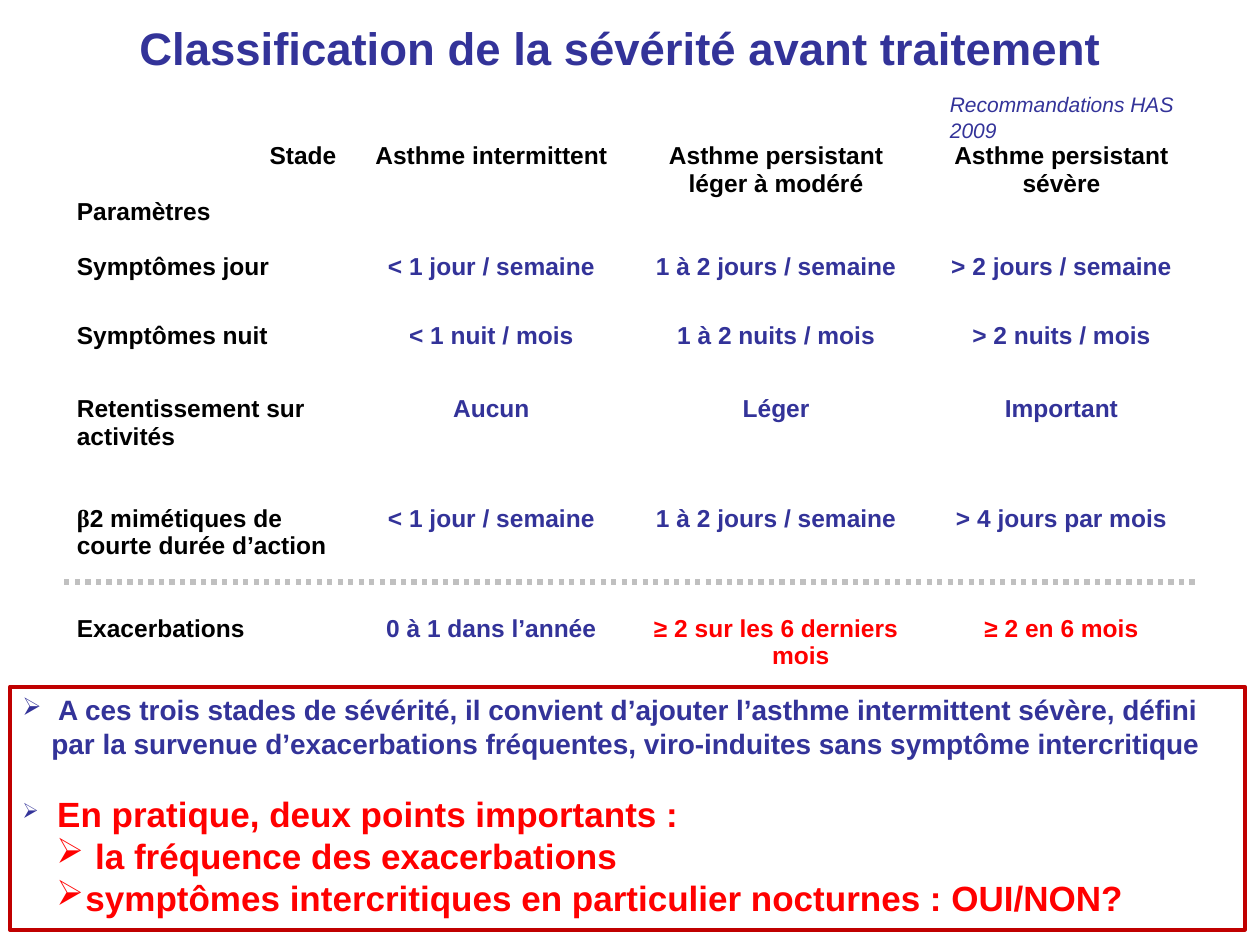
import pptx
import pptx.util
import pptx.dml.color
import pptx.enum.dml
import pptx.enum.shapes
import pptx.enum.text
import pptx.oxml
from lxml import etree

Inches = pptx.util.Inches
Pt = pptx.util.Pt
RGBColor = pptx.dml.color.RGBColor
ALIGN = pptx.enum.text.PP_ALIGN

NAVY = RGBColor(0x33, 0x33, 0x99)
BLACK = RGBColor(0, 0, 0)
RED = RGBColor(0xFF, 0, 0)
DARK_RED = RGBColor(0xC0, 0, 0)
SILVER = RGBColor(0xC0, 0xC0, 0xC0)
WHITE = RGBColor(0xFF, 0xFF, 0xFF)

TABLE_LEFT, TABLE_TOP = 0.51, 1.08
COLUMN_WIDTHS = [2.26, 2.26, 2.26, 2.27]
ROW_HEIGHTS = [0.88, 0.55, 0.58, 0.87, 0.87, 0.58]
CRITERIA = [
    ["Stade\nParamètres", "Asthme intermittent", "Asthme persistant\nléger à modéré",
     "Asthme persistant\nsévère"],
    ["Symptômes jour", "< 1 jour / semaine", "1 à 2 jours / semaine", "> 2 jours / semaine"],
    ["Symptômes nuit", "< 1 nuit / mois", "1 à 2 nuits / mois", "> 2 nuits / mois"],
    ["Retentissement sur\nactivités", "Aucun", "Léger", "Important"],
    ["β2 mimétiques de\ncourte durée d’action", "< 1 jour / semaine",
     "1 à 2 jours / semaine", "> 4 jours par mois"],
    ["Exacerbations", "0 à 1 dans l’année", "≥ 2 sur les 6 derniers mois", "≥ 2 en 6 mois"],
]
DEFINITION = ("A ces trois stades de sévérité, il convient d’ajouter l’asthme intermittent "
              "sévère, défini par la survenue d’exacerbations fréquentes, viro-induites "
              "sans symptôme intercritique")


def style(run, size, color, bold=False, italic=False, font="Arial"):
    run.font.name = font
    run.font.size = Pt(size)
    run.font.bold = bold
    run.font.italic = italic
    run.font.color.rgb = color


def add_run(paragraph, text, *look, **extra):
    run = paragraph.add_run()
    run.text = text
    style(run, *look, **extra)


def set_indent(paragraph, margin, first_line):
    properties = paragraph._p.get_or_add_pPr()
    properties.set("marL", str(Inches(margin)))
    properties.set("indent", str(Inches(first_line)))
    return properties


def set_bullet(paragraph, margin):
    properties = set_indent(paragraph, margin, -0.23)
    bullet = etree.SubElement(properties, pptx.oxml.ns.qn("a:buChar"))
    bullet.set("char", "➢")


def set_borders(cell, color):
    properties = cell._tc.get_or_add_tcPr()
    for position, side in enumerate(("lnL", "lnR", "lnT", "lnB")):
        properties.insert(position, pptx.oxml.parse_xml(
            f'<a:{side} {pptx.oxml.ns.nsdecls("a")} w="{Pt(1)}"><a:solidFill>'
            f'<a:srgbClr val="{color}"/></a:solidFill></a:{side}>'))


def add_title(slide):
    title = slide.shapes.title
    title.left, title.top = Inches(0.2), Inches(0.06)
    title.width, title.height = Inches(9.45), Inches(0.78)
    frame = title.text_frame
    frame.text = "Classification de la sévérité avant traitement"
    frame.margin_left = frame.margin_right = Inches(0.2)
    frame.margin_top = frame.margin_bottom = Inches(0.1)
    frame.vertical_anchor = pptx.enum.text.MSO_ANCHOR.TOP
    frame.paragraphs[0].alignment = ALIGN.CENTER
    style(frame.paragraphs[0].runs[0], 26, NAVY, bold=True)


def fill_cell(cell, text, color, alignment):
    cell.fill.background()
    set_borders(cell, WHITE)
    cell.text = text
    for paragraph in cell.text_frame.paragraphs:
        paragraph.alignment = alignment
        set_indent(paragraph, 0.39, -0.39)
        for run in paragraph.runs:
            style(run, 14, color, bold=True)


def add_criteria_table(slide):
    table = slide.shapes.add_table(
        len(ROW_HEIGHTS), len(COLUMN_WIDTHS), Inches(TABLE_LEFT), Inches(TABLE_TOP),
        Inches(sum(COLUMN_WIDTHS)), Inches(sum(ROW_HEIGHTS))).table
    table.first_row = table.horz_banding = False
    for column, width in zip(table.columns, COLUMN_WIDTHS):
        column.width = Inches(width)
    for r, (height, texts) in enumerate(zip(ROW_HEIGHTS, CRITERIA)):
        table.rows[r].height = Inches(height)
        for c, text in enumerate(texts):
            is_header = r == 0 or c == 0
            color = BLACK if is_header else RED if text.startswith("≥") else NAVY
            fill_cell(table.cell(r, c), text, color, ALIGN.CENTER if c else ALIGN.LEFT)

    stage, parameters = table.cell(0, 0).text_frame.paragraphs
    stage.alignment = ALIGN.RIGHT
    parameters.space_before = Pt(16)

    beta = table.cell(4, 0).text_frame.paragraphs[0]
    name = beta.runs[0]
    name.text = "β"
    name.font.name = "Times New Roman"
    add_run(beta, "2 mimétiques de", 14, BLACK, bold=True)


def add_conclusions(slide):
    box = slide.shapes.add_shape(pptx.enum.shapes.MSO_SHAPE.RECTANGLE,
                                 Inches(0.08), Inches(5.45), Inches(9.8), Inches(1.93))
    box.shadow.inherit = False
    box.fill.background()
    box.line.color.rgb = DARK_RED
    box.line.width = Pt(2.25)
    frame = box.text_frame
    frame.word_wrap = True
    frame.vertical_anchor = pptx.enum.text.MSO_ANCHOR.TOP

    points = [
        (0, 0.23, [(" ", 14, NAVY, False), (DEFINITION, 16, NAVY, True)]),
        (18.4, 0.23, [(" ", 12, NAVY, False),
                      ("En pratique, deux points importants :", 20, RED, True)]),
        (0, 0.5, [(" la fréquence des exacerbations", 20, RED, True)]),
        (0, 0.5, [("symptômes intercritiques en particulier nocturnes : OUI/NON?",
                   20, RED, True)]),
    ]
    for number, (gap, margin, pieces) in enumerate(points):
        paragraph = frame.add_paragraph() if number else frame.paragraphs[0]
        paragraph.alignment = ALIGN.LEFT
        paragraph.level = int(margin > 0.23)
        paragraph.space_before = Pt(gap)
        set_bullet(paragraph, margin)
        for piece in pieces:
            add_run(paragraph, *piece)


def add_reference(slide):
    frame = slide.shapes.add_textbox(Inches(7.44), Inches(0.68),
                                     Inches(2.39), Inches(0.3)).text_frame
    frame.word_wrap = True
    add_run(frame.paragraphs[0], "Recommandations HAS 2009", 12, NAVY, italic=True)


def add_separator(slide):
    separator = slide.shapes.add_connector(
        pptx.enum.shapes.MSO_CONNECTOR.STRAIGHT,
        Inches(TABLE_LEFT), Inches(4.62), Inches(10 - TABLE_LEFT), Inches(4.62))
    separator.line.color.rgb = SILVER
    separator.line.width = Pt(3)
    separator.line.dash_style = pptx.enum.dml.MSO_LINE.ROUND_DOT
    etree.SubElement(separator._element.spPr, pptx.oxml.ns.qn("a:effectLst"))


def main():
    presentation = pptx.Presentation()
    presentation.slide_width, presentation.slide_height = Inches(10), Inches(7.5)
    slide = presentation.slides.add_slide(presentation.slide_layouts[5])
    add_title(slide)
    add_criteria_table(slide)
    add_conclusions(slide)
    add_reference(slide)
    add_separator(slide)
    presentation.save("out.pptx")


if __name__ == "__main__":
    main()
